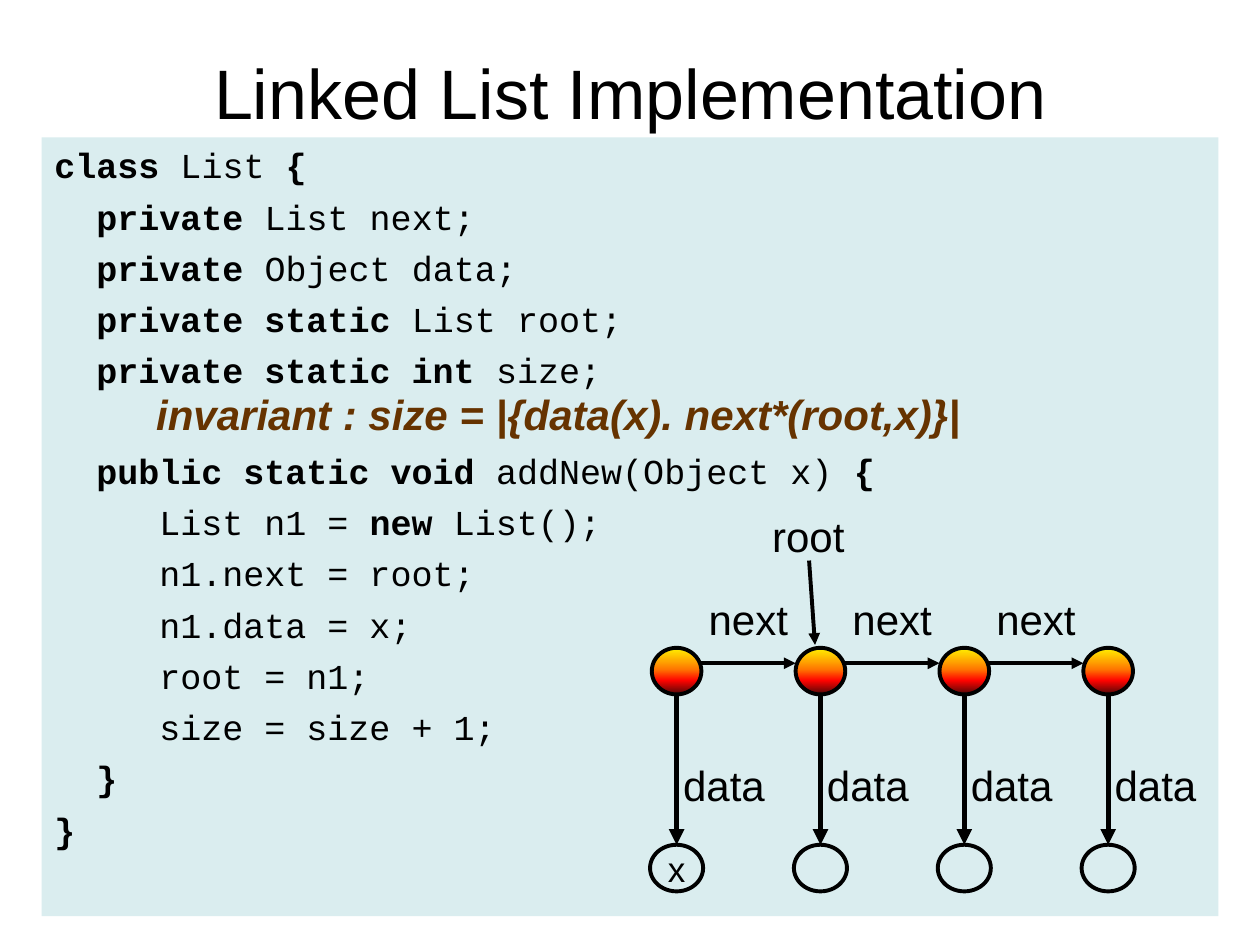
import pptx
import pptx.util
import pptx.dml.color
import pptx.enum.shapes
import pptx.enum.text
import pptx.oxml.ns
import lxml.etree

Cm, Pt = pptx.util.Cm, pptx.util.Pt
RGBColor = pptx.dml.color.RGBColor
ALIGN = pptx.enum.text.PP_ALIGN
ANCHOR = pptx.enum.text.MSO_ANCHOR
AUTO_SIZE = pptx.enum.text.MSO_AUTO_SIZE
qn = pptx.oxml.ns.qn

BLACK = RGBColor(0x00, 0x00, 0x00)
BROWN = RGBColor(0x66, 0x33, 0x00)
PALE_BLUE = RGBColor(0xDA, 0xED, 0xEF)
FLAME = [
    (0, RGBColor(0xFF, 0xF2, 0x00)),
    (45, RGBColor(0xFF, 0x7A, 0x00)),
    (70, RGBColor(0xFF, 0x03, 0x00)),
    (100, RGBColor(0x4D, 0x08, 0x08)),
]

HEADING = "Linked List Implementation"
INVARIANT = "invariant : size = |{data(x). next*(root,x)}|"
CODE = [
    (0, [("class", True), (" List ", False), ("{", True)]),
    (2, [("private", True), (" List next;", False)]),
    (2, [("private", True), (" Object data;", False)]),
    (2, [("private static", True), (" List root;", False)]),
    (2, [("private static int", True), (" size;", False)]),
    (2, [("public static void", True), (" addNew(Object x) ", False), ("{", True)]),
    (5, [("List n1 = ", False), ("new", True), (" List();", False)]),
    (5, [("n1.next = root;", False)]),
    (5, [("n1.data = x;", False)]),
    (5, [("root = n1;", False)]),
    (5, [("size = size + 1;", False)]),
    (2, [("}", True)]),
    (0, [("}", True)]),
]
AFTER_INVARIANT = 5
DATA_VALUES = ["x", "", "", ""]

CHAR_WIDTH, LINE_GAP, LINE_PITCH = 12, 5.3, 28
FIRST_NODE, NODE_PITCH = 13.64, 2.9
NODE_WIDTH, DATA_WIDTH, OVAL_HEIGHT = 1, 1.07, 0.94
NODE_TOP, DATA_TOP, NEXT_Y = 13.06, 17.03, 13.37

CODE_FONT = {"name": "Courier New", "size": Pt(20)}
TITLE_FONT = {"name": "Arial", "size": Pt(40), "bold": False}
LABEL_FONT = {"name": "Arial", "size": Pt(24)}
VALUE_FONT = {"name": "Arial", "size": Pt(20)}
INVARIANT_FONT = {**LABEL_FONT, "bold": True, "italic": True}


def style(target, values):
    for key, value in values.items():
        setattr(target, key, value)


def write(paragraph, text, font, color=BLACK):
    run = paragraph.add_run()
    run.text = text
    style(run.font, font)
    run.font.color.rgb = color
    return run


def place(shape, left, top, width, height):
    style(shape, {"left": Cm(left), "top": Cm(top),
                  "width": Cm(width), "height": Cm(height)})


def add_label(slide, text, left, top):
    label = slide.shapes.add_textbox(Cm(left), Cm(top), Cm(1.75), Cm(0.79))
    style(label.text_frame, {"margin_left": 0, "margin_right": 0, "margin_top": 0,
                             "margin_bottom": 0, "word_wrap": True,
                             "auto_size": AUTO_SIZE.SHAPE_TO_FIT_TEXT})
    line = label.text_frame.paragraphs[0]
    style(line, {"alignment": ALIGN.CENTER, "line_spacing": 0.83})
    write(line, text, LABEL_FONT)


def add_arrow(slide, start, end, weight):
    arrow = slide.shapes.add_connector(
        pptx.enum.shapes.MSO_CONNECTOR.STRAIGHT, *map(Cm, start + end))
    arrow.line.color.rgb = BLACK
    arrow.line.width = Pt(weight)
    lxml.etree.SubElement(arrow.line._get_or_add_ln(), qn("a:tailEnd"), type="triangle")
    lxml.etree.SubElement(arrow._element.spPr, qn("a:effectLst"))


def add_oval(slide, center, top, width):
    oval = slide.shapes.add_shape(
        pptx.enum.shapes.MSO_SHAPE.OVAL,
        Cm(center - width / 2), Cm(top), Cm(width), Cm(OVAL_HEIGHT))
    oval.shadow.inherit = False
    oval.fill.background()
    oval.line.color.rgb = BLACK
    oval.line.width = Pt(2.25)
    return oval


def fill_flame(oval):
    oval.fill.gradient()
    oval.fill.gradient_angle = 270
    stops = oval._element.spPr.find(qn("a:gradFill")).find(qn("a:gsLst"))
    for stop in list(stops):
        stops.remove(stop)
    for percent, color in FLAME:
        stop = lxml.etree.SubElement(stops, qn("a:gs"), pos=str(percent * 1000))
        lxml.etree.SubElement(stop, qn("a:srgbClr"), val=str(color))


def add_heading(slide):
    title = slide.shapes.title
    place(title, 1.27, 0.5, 22.86, 2.67)
    style(title.text_frame, {"vertical_anchor": ANCHOR.MIDDLE,
                             "auto_size": AUTO_SIZE.NONE})
    line = title.text_frame.paragraphs[0]
    line.alignment = ALIGN.CENTER
    write(line, HEADING, TITLE_FONT)


def add_code(slide):
    code = slide.placeholders[1]
    place(code, 0.84, 2.77, 23.72, 15.7)
    code.fill.solid()
    code.fill.fore_color.rgb = PALE_BLUE
    code.text_frame.auto_size = AUTO_SIZE.NONE
    for number, (indent, parts) in enumerate(CODE):
        line = code.text_frame.add_paragraph() if number else code.text_frame.paragraphs[0]
        skipped = LINE_PITCH if number == AFTER_INVARIANT else 0
        line.space_before = Pt(LINE_GAP + skipped)
        properties = line._p.get_or_add_pPr()
        properties.set("marL", str(Pt(indent * CHAR_WIDTH)))
        properties.set("indent", "0")
        lxml.etree.SubElement(properties, qn("a:buNone"))
        for text, bold in parts:
            write(line, text, {**CODE_FONT, "bold": bold})


def add_invariant(slide):
    invariant = slide.shapes.add_textbox(Cm(2.9), Cm(7.7), Cm(16.89), Cm(1.3))
    style(invariant.text_frame, {"word_wrap": False,
                                 "auto_size": AUTO_SIZE.SHAPE_TO_FIT_TEXT})
    write(invariant.text_frame.paragraphs[0], INVARIANT, INVARIANT_FONT, BROWN)


def add_linked_list(slide):
    for number, value in enumerate(DATA_VALUES):
        center = FIRST_NODE + number * NODE_PITCH
        fill_flame(add_oval(slide, center, NODE_TOP, NODE_WIDTH))
        datum = add_oval(slide, center, DATA_TOP, DATA_WIDTH)
        if value:
            style(datum.text_frame, {"word_wrap": False, "vertical_anchor": ANCHOR.MIDDLE})
            line = datum.text_frame.paragraphs[0]
            style(line, {"alignment": ALIGN.CENTER, "space_before": Pt(4)})
            write(line, value, VALUE_FONT)
        add_arrow(slide, (center, NODE_TOP + OVAL_HEIGHT), (center, DATA_TOP), 3)
        add_label(slide, "data", center + 0.08, 15.49)
        if number < len(DATA_VALUES) - 1:
            edge = center + NODE_WIDTH / 2
            add_arrow(slide, (edge, NEXT_Y), (edge + NODE_PITCH - NODE_WIDTH, NEXT_Y), 2.25)
            add_label(slide, "next", center + 0.57, 12.14)
    add_label(slide, "root", 15.42, 10.46)
    add_arrow(slide, (16.31, 11.3), (16.43, 13), 2.25)


def main():
    deck = pptx.Presentation()
    style(deck, {"slide_width": Cm(25.4), "slide_height": Cm(19.05)})
    slide = deck.slides.add_slide(deck.slide_layouts[1])
    add_heading(slide)
    add_code(slide)
    add_linked_list(slide)
    add_invariant(slide)
    deck.save("out.pptx")


if __name__ == "__main__":
    main()
